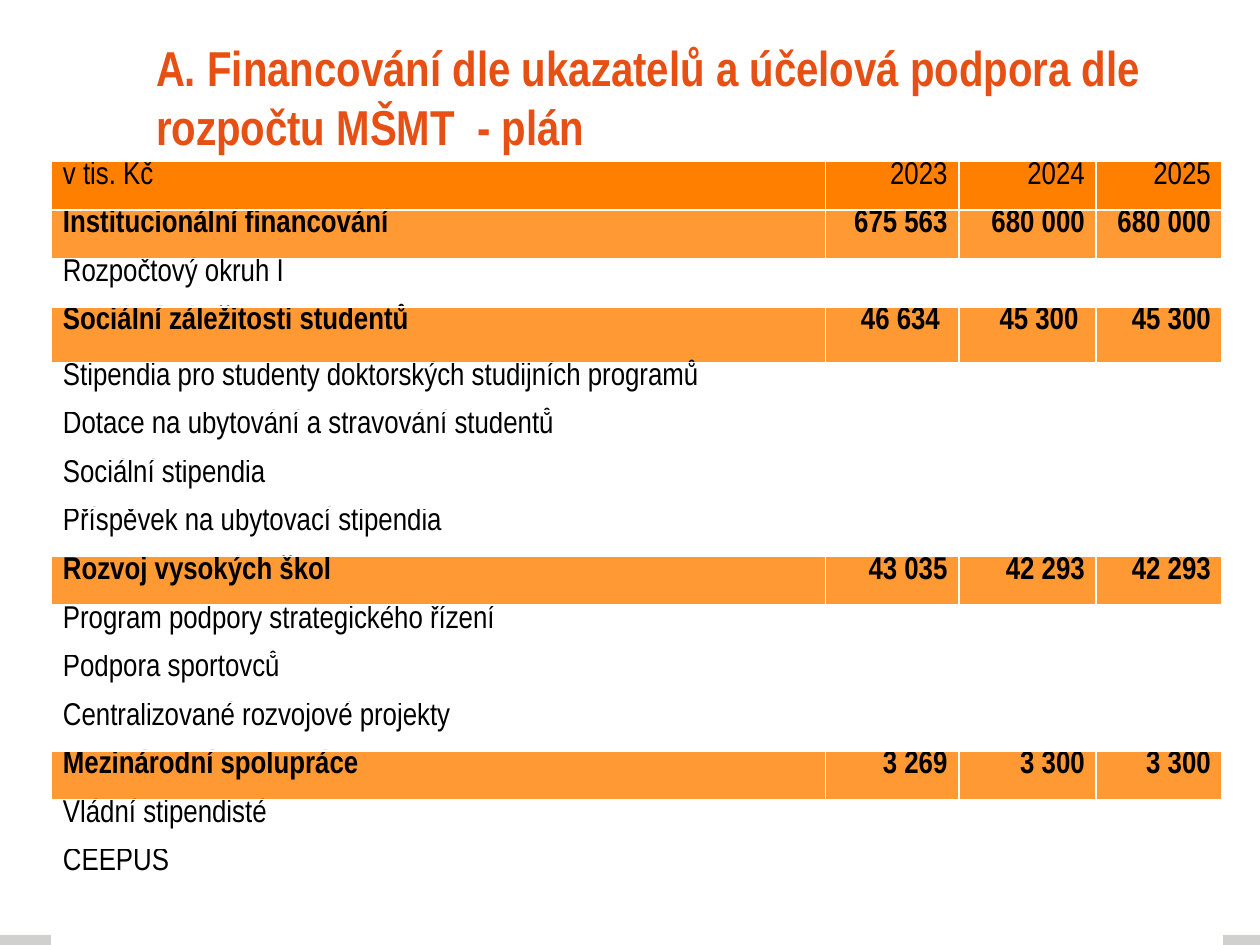
from pptx import Presentation
from pptx.dml.color import RGBColor
from pptx.enum.shapes import MSO_SHAPE
from pptx.enum.text import MSO_ANCHOR, PP_ALIGN
from pptx.util import Inches, Pt

FONT = "Arial Narrow"
BLACK = RGBColor(0x00, 0x00, 0x00)
WHITE = RGBColor(0xFF, 0xFF, 0xFF)
GREY = RGBColor(0xD0, 0xD0, 0xCE)
TITLE_COLOR = RGBColor(0xE6, 0x50, 0x14)
HEADER_FILL = RGBColor(0xFF, 0x80, 0x01)
GROUP_FILL = RGBColor(0xFF, 0x99, 0x33)

TITLE = "A. Financování dle ukazatelů a účelová podpora dle rozpočtu MŠMT  - plán"
HEADER = ["v tis. Kč", "2023", "2024", "2025"]
GROUPS = [
    (["Institucionální financování", "675 563", "680 000", "680 000"],
     ["Rozpočtový okruh I"]),
    (["Sociální záležitosti studentů", "46 634", "45 300", "45 300"],
     ["Stipendia pro studenty doktorských studijních programů",
      "Dotace na ubytování a stravování studentů",
      "Sociální stipendia",
      "Příspěvek na ubytovací stipendia"]),
    (["Rozvoj vysokých škol", "43 035", "42 293", "42 293"],
     ["Program podpory strategického řízení",
      "Podpora sportovců",
      "Centralizované rozvojové projekty"]),
    (["Mezinárodní spolupráce", "3 269", "3 300", "3 300"],
     ["Vládní stipendisté", "CEEPUS", ""]),
]
COL_WIDTHS = [6.14, 1.06, 1.09, 1]
ROW_H = 5.4 / 14
TALL_ROW, TALL_H = 3, 0.44
SIDE_MARGIN = 0.09
WIDE_MARGINS = {(3, 1): 0.15, (3, 2): 0.14}  # right margins of two shifted figures


def format_run(r, size, color, bold):
    r.font.name = FONT
    r.font.size = Pt(size)
    r.font.bold = bold
    r.font.color.rgb = color


def table_rows():
    """Return (texts, fill, bold) for every row, top to bottom."""
    rows = [(HEADER, HEADER_FILL, False)]
    for totals, items in GROUPS:
        rows.append((totals, GROUP_FILL, True))
        rows += [([item, "", "", ""], WHITE, False) for item in items]
    return rows


def add_title(slide):
    box = slide.shapes.add_textbox(Inches(1.14), Inches(0.36), Inches(8.11), Inches(0.81))
    tf = box.text_frame
    tf.word_wrap = True
    tf.vertical_anchor = MSO_ANCHOR.MIDDLE
    tf.text = TITLE
    format_run(tf.paragraphs[0].runs[0], 28, TITLE_COLOR, True)


def add_budget_table(slide):
    rows = table_rows()
    heights = [TALL_H if i == TALL_ROW else ROW_H for i in range(len(rows))]
    table = slide.shapes.add_table(
        len(rows), len(COL_WIDTHS), Inches(0.41), Inches(1.28),
        Inches(sum(COL_WIDTHS)), Inches(sum(heights))).table
    for column, width in zip(table.columns, COL_WIDTHS):
        column.width = Inches(width)
    for i, (texts, fill, bold) in enumerate(rows):
        table.rows[i].height = Inches(heights[i])
        for j, text in enumerate(texts):
            cell = table.cell(i, j)
            cell.fill.solid()
            cell.fill.fore_color.rgb = fill
            cell.margin_left = Inches(SIDE_MARGIN)
            cell.margin_right = Inches(WIDE_MARGINS.get((i, j), SIDE_MARGIN))
            cell.margin_top = cell.margin_bottom = 0
            if text:
                cell.text_frame.text = text
                p = cell.text_frame.paragraphs[0]
                p.alignment = PP_ALIGN.RIGHT if j else PP_ALIGN.LEFT
                format_run(p.runs[0], 18, BLACK, bold)


def main():
    prs = Presentation()
    prs.slide_width, prs.slide_height = Inches(10), Inches(7.5)
    slide = prs.slides.add_slide(prs.slide_layouts[6])

    bar = slide.shapes.add_shape(
        MSO_SHAPE.RECTANGLE, 0, Inches(7.42), Inches(10), Inches(0.08))
    bar.shadow.inherit = False
    bar.fill.solid()
    bar.fill.fore_color.rgb = GREY
    bar.line.fill.background()

    add_title(slide)
    add_budget_table(slide)
    prs.save("out.pptx")


if __name__ == "__main__":
    main()
